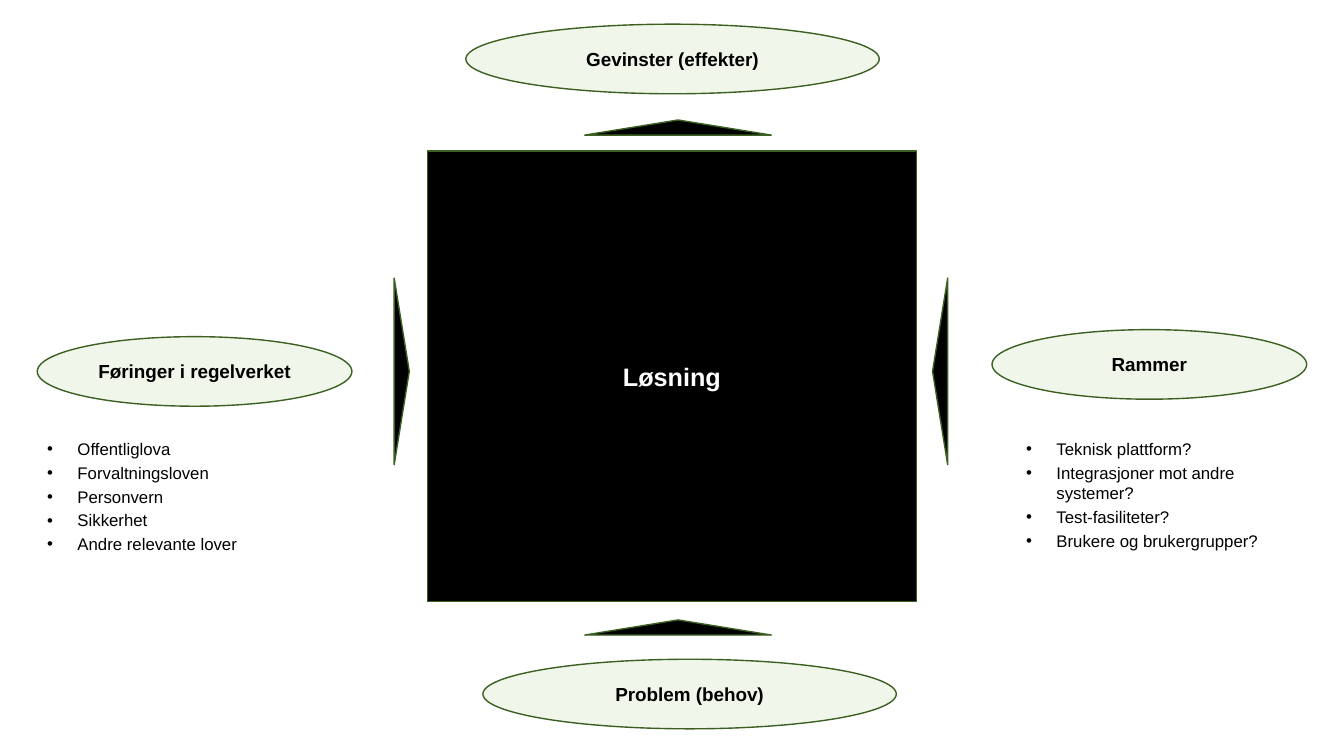
from lxml.etree import SubElement
from pptx import Presentation
from pptx.dml.color import RGBColor
from pptx.enum.shapes import MSO_SHAPE as Kind
from pptx.enum.text import MSO_ANCHOR as Anchor, PP_ALIGN as Align
from pptx.oxml.ns import qn
from pptx.util import Inches, Pt

BLACK = RGBColor(0x00, 0x00, 0x00)
WHITE = RGBColor(0xFF, 0xFF, 0xFF)
PALE = RGBColor(0xF0, 0xF7, 0xEA)
GREEN = RGBColor(0x3C, 0x60, 0x22)
FONT = "Arial"
WIDE, SLIM = 30.76, 23.41
MID = 49.13

BLOCK = ("Løsning", 50, 49.8, 36.38, 59.6)
OVALS = [
    ("Problem (behov)", 51.31, 91.8, WIDE),
    ("Gevinster (effekter)", 50.04, 7.8, WIDE),
    ("Rammer", 85.52, 48.2, SLIM),
    ("Føringer i regelverket", 14.48, MID, SLIM),
]
ARROWS = [
    (69.95, MID, 270),
    (29.89, MID, 90),
    (50.45, 16.87, 0),
    (50.45, 83, 0),
]
LISTS = [
    (10.84, 16.13, ["Offentliglova", "Forvaltningsloven", "Personvern",
                    "Sikkerhet", "Andre relevante lover"]),
    (86.42, 21.61, ["Teknisk plattform?", "Integrasjoner mot andre systemer?",
                    "Test-fasiliteter?", "Brukere og brukergrupper?"]),
]


def place(deck, x, y, wide, high):
    """Turn a centre and size in percent of the slide into a box."""
    across, down = deck.slide_width / 100, deck.slide_height / 100
    return (round((x - wide / 2) * across), round((y - high / 2) * down),
            round(wide * across), round(high * down))


def style(font, size, color, bold=False):
    """Set the look of a font."""
    font.name, font.size, font.bold = FONT, Pt(size), bold
    font.color.rgb = color


def draw(slide, kind, box, fill):
    """Add an outlined shape."""
    shape = slide.shapes.add_shape(kind, *box)
    shape.shadow.inherit = False
    shape.fill.solid()
    shape.fill.fore_color.rgb = fill
    shape.line.color.rgb = GREEN
    shape.line.width = Pt(1)
    return shape


def label(shape, text, size, color):
    """Write a bold centred label in a shape."""
    frame = shape.text_frame
    frame.text = text
    frame.word_wrap = True
    frame.vertical_anchor = Anchor.MIDDLE
    para = frame.paragraphs[0]
    para.alignment = Align.CENTER
    style(para.runs[0].font, size, color, True)


def bullets(slide, box, items):
    """Add a bulleted list."""
    frame = slide.shapes.add_textbox(*box).text_frame
    frame.word_wrap = True
    frame.text = "\n".join(items)
    for spot, para in enumerate(frame.paragraphs):
        para.space_before = Pt(2.7 if spot else 0)
        props = para._p.get_or_add_pPr()
        props.set("marL", str(Inches(0.3)))
        props.set("indent", str(-Inches(0.3)))
        SubElement(props, qn("a:buFont")).set("typeface", FONT)
        SubElement(props, qn("a:buChar")).set("char", "•")
        style(para.runs[0].font, 12, BLACK)


def main():
    """Build the solution overview slide."""
    deck = Presentation()
    deck.slide_width, deck.slide_height = Inches(13.33), Inches(7.5)
    slide = deck.slides.add_slide(deck.slide_layouts[6])
    text, *area = BLOCK
    block = draw(slide, Kind.RECTANGLE, place(deck, *area), BLACK)
    label(block, text, 18, WHITE)
    for text, x, y, wide in OVALS:
        oval = draw(slide, Kind.OVAL, place(deck, x, y, wide, 9.2), PALE)
        label(oval, text, 13.5, BLACK)
    for x, y, turn in ARROWS:
        box = place(deck, x, y, 13.88, 2)
        draw(slide, Kind.ISOSCELES_TRIANGLE, box, BLACK).rotation = turn
    for x, wide, items in LISTS:
        bullets(slide, place(deck, x, 67.27, wide, 19.87), items)
    deck.save("out.pptx")


if __name__ == "__main__":
    main()
